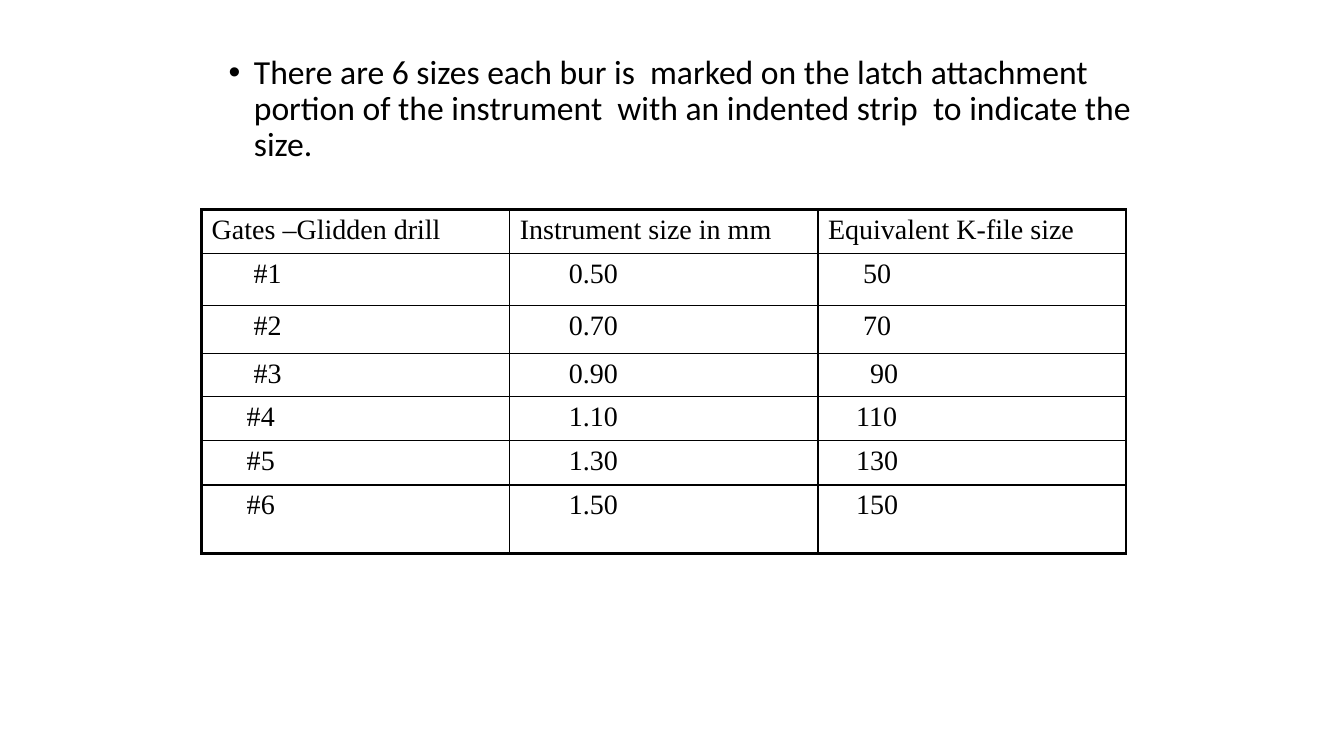
from dataclasses import dataclass

from lxml import etree
from pptx import Presentation, util as u
from pptx.dml.color import RGBColor
from pptx.oxml import ns

NOTE = ("There are 6 sizes each bur is  marked on the latch attachment portion "
        "of the instrument  with an indented strip  to indicate the size.")
HEAD = ("Gates –Glidden drill", "Instrument size in mm", "Equivalent K-file size")
DRILLS = [
    ("#1", "0.50", "50"),
    ("#2", "0.70", "70"),
    ("#3", "0.90", "90"),
    ("#4", "1.10", "110"),
    ("#5", "1.30", "130"),
    ("#6", "1.50", "150"),
]
ROWS = [HEAD] + DRILLS
HEIGHTS = (0.43, 0.52, 0.47, 0.43, 0.43, 0.44, 0.68)
# Indent of each cell, in steps of one quarter em
STEPS = [(0, 0, 0), (6, 7, 5), (6, 7, 5), (6, 7, 6)] + [(5, 7, 4)] * 3


@dataclass
class Theme:
    ink: str = "000000"
    body: str = "Calibri"
    grid: str = "Times New Roman"
    note: int = 24
    cell: int = 20
    thin: float = 1
    thick: float = 2.25


T = Theme()
W, H = u.Inches(13.33), u.Inches(7.5)


def style(para, face, size):
    para.font.name, para.font.size = face, u.Pt(size)
    para.font.color.rgb = RGBColor.from_string(T.ink)


def indent(para, left, first=0):
    props = para._p.get_or_add_pPr()
    props.set("marL", str(int(left)))
    props.set("indent", str(int(first)))
    return props


def border(cell, row, col):
    """Draw thick lines on the rim of the table and thin ones inside."""
    rims = {"L": col == 0, "R": col == len(HEAD) - 1,
            "T": row == 0, "B": row == len(ROWS) - 1}
    props = cell._tc.get_or_add_tcPr()
    for i, (side, rim) in enumerate(rims.items()):
        line = etree.Element(ns.qn("a:ln" + side))
        line.set("w", str(int(u.Pt(T.thick if rim else T.thin))))
        fill = etree.SubElement(line, ns.qn("a:solidFill"))
        etree.SubElement(fill, ns.qn("a:srgbClr")).set("val", T.ink)
        props.insert(i, line)


def add_note(slide):
    box = slide.shapes.add_textbox(u.Inches(2.17), H // 15, u.Inches(9.17), H // 5)
    box.text_frame.word_wrap = True
    para = box.text_frame.paragraphs[0]
    para.text = NOTE
    para.line_spacing = 0.9
    props = indent(para, u.Inches(0.25), -u.Inches(0.25))
    etree.SubElement(props, ns.qn("a:buFont")).set("typeface", "Arial")
    etree.SubElement(props, ns.qn("a:buChar")).set("char", "•")
    style(para, T.body, T.note)


def add_sizes(slide):
    wide = u.Inches(9.17)
    frame = slide.shapes.add_table(len(ROWS), len(HEAD), u.Inches(2), u.Inches(2.08),
                                   wide, u.Inches(sum(HEIGHTS)))
    table = frame.table
    table.first_row = table.horz_banding = False
    for col in table.columns:
        col.width = wide // len(HEAD)
    for r, (words, steps) in enumerate(zip(ROWS, STEPS)):
        table.rows[r].height = u.Inches(HEIGHTS[r])
        for c, (word, step) in enumerate(zip(words, steps)):
            cell = table.cell(r, c)
            cell.fill.background()
            border(cell, r, c)
            para = cell.text_frame.paragraphs[0]
            para.text = word
            indent(para, step * u.Pt(T.cell) / 4)
            style(para, T.grid, T.cell)


def main():
    deck = Presentation()
    deck.slide_width, deck.slide_height = W, H
    slide = deck.slides.add_slide(deck.slide_layouts[6])
    add_note(slide)
    add_sizes(slide)
    deck.save("out.pptx")


if __name__ == "__main__":
    main()
